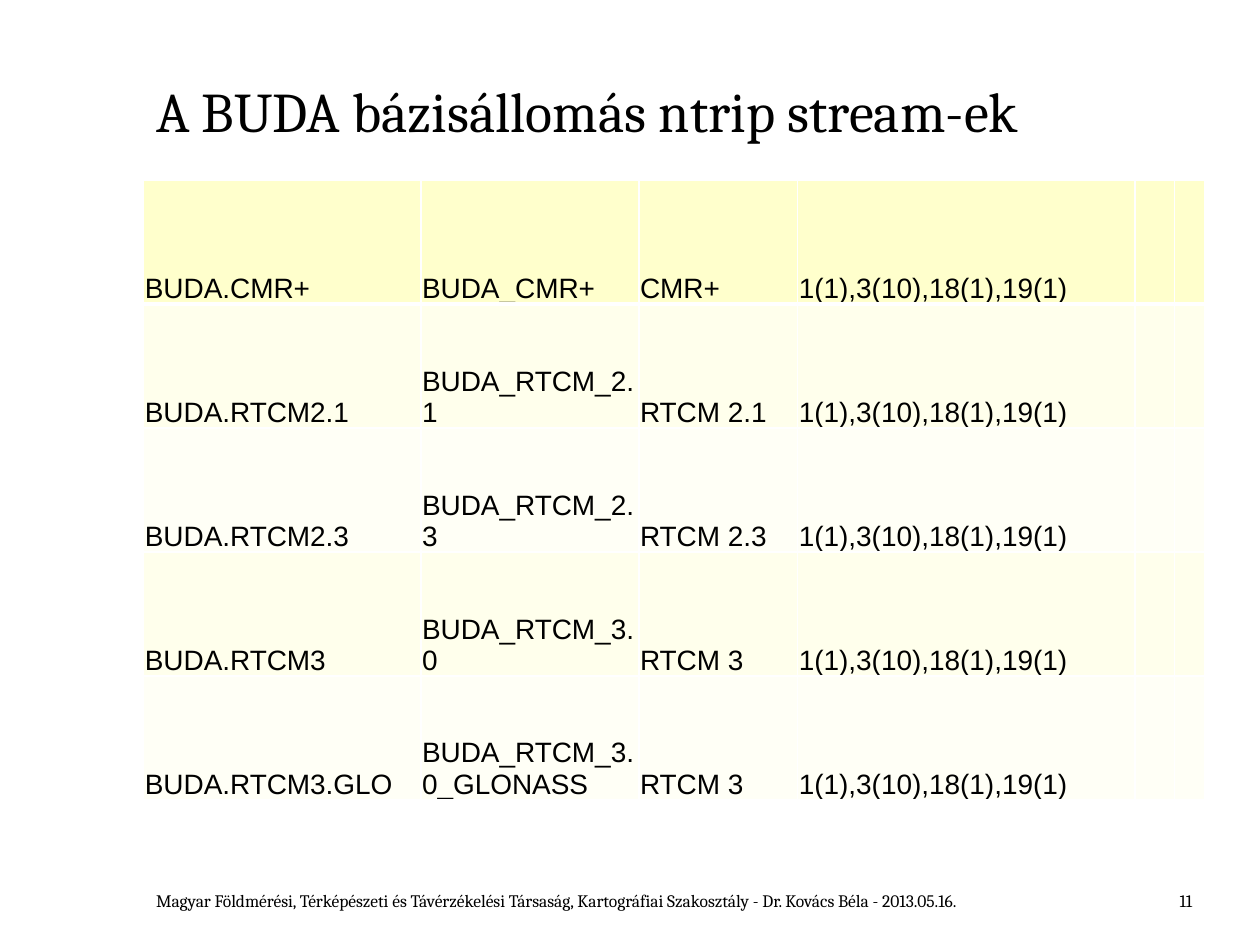
import pptx
import pptx.dml.color
import pptx.enum.text
import pptx.oxml
import pptx.oxml.ns
import pptx.util

Inches, Pt = pptx.util.Inches, pptx.util.Pt
RGBColor = pptx.dml.color.RGBColor
ANCHOR = pptx.enum.text.MSO_ANCHOR
ALIGN = pptx.enum.text.PP_ALIGN

COLORS = {
    "text": "000000",
    "border": "FFFFFF",
    "header": "FFFFCC",
    "odd row": "FFFFEC",
    "even row": "FFFFF6",
}
LEFT, WIDTH = 1.14, 8.43
COLUMN_WIDTHS = [2.2, 1.73, 1.26, 2.68, 0.31, 0.24]
TABLE_TOP, TABLE_HEIGHT = 1.43, 4.92
FOOTER_TOP, FOOTER_HEIGHT = 6.9, 0.38

SATELLITE_MESSAGES = "1(1),3(10),18(1),19(1)"
STREAMS = [
    ("BUDA.CMR+", "BUDA_CMR+", "CMR+"),
    ("BUDA.RTCM2.1", "BUDA_RTCM_2.1", "RTCM 2.1"),
    ("BUDA.RTCM2.3", "BUDA_RTCM_2.3", "RTCM 2.3"),
    ("BUDA.RTCM3", "BUDA_RTCM_3.0", "RTCM 3"),
    ("BUDA.RTCM3.GLO", "BUDA_RTCM_3.0_GLONASS", "RTCM 3"),
]


def add_run(paragraph, text, font_name, size):
    run = paragraph.add_run()
    run.text = text
    run.font.name = font_name
    run.font.size = Pt(size)
    run.font.color.rgb = RGBColor.from_string(COLORS["text"])


def add_borders(cell, bottom_width):
    """Draw all four cell borders; call before the fill is set."""
    properties = cell._tc.get_or_add_tcPr()
    for side, width in (("L", 1), ("R", 1), ("T", 1), ("B", bottom_width)):
        properties.append(pptx.oxml.parse_xml(
            f'<a:ln{side} {pptx.oxml.ns.nsdecls("a")} w="{Pt(width)}">'
            f'<a:solidFill><a:srgbClr val="{COLORS["border"]}"/></a:solidFill>'
            f'</a:ln{side}>'))


presentation = pptx.Presentation()
presentation.slide_width = Inches(10)
presentation.slide_height = Inches(7.5)
slide = presentation.slides.add_slide(presentation.slide_layouts[6])

# Title, footer and slide number
for text, left, top, width, height, size, alignment in (
    ("A BUDA bázisállomás ntrip stream-ek",
     LEFT, 0.25, WIDTH, 0.94, 32, ALIGN.LEFT),
    ("Magyar Földmérési, Térképészeti és Távérzékelési Társaság, "
     "Kartográfiai Szakosztály - Dr. Kovács Béla - 2013.05.16.",
     LEFT, FOOTER_TOP, 7.95, FOOTER_HEIGHT, 10, ALIGN.LEFT),
    ("11", 7.48, FOOTER_TOP, 2.08, FOOTER_HEIGHT, 10, ALIGN.RIGHT),
):
    box = slide.shapes.add_textbox(
        Inches(left), Inches(top), Inches(width), Inches(height))
    frame = box.text_frame
    frame.word_wrap = True
    frame.vertical_anchor = ANCHOR.BOTTOM
    paragraph = frame.paragraphs[0]
    paragraph.alignment = alignment
    add_run(paragraph, text, "Cambria", size)

# Stream table
table = slide.shapes.add_table(
    len(STREAMS), len(COLUMN_WIDTHS), Inches(LEFT), Inches(TABLE_TOP),
    Inches(WIDTH), Inches(TABLE_HEIGHT)).table
for column, width in zip(table.columns, COLUMN_WIDTHS):
    column.width = Inches(width)

for row_index, stream in enumerate(STREAMS):
    if row_index == 0:
        fill, bottom_width = COLORS["header"], 3
    else:
        fill = COLORS["odd row" if row_index % 2 else "even row"]
        bottom_width = 1
    texts = (*stream, SATELLITE_MESSAGES, "", "")
    for column_index, text in enumerate(texts):
        cell = table.cell(row_index, column_index)
        cell.vertical_anchor = ANCHOR.BOTTOM
        cell.margin_left = cell.margin_right = cell.margin_top = Inches(0.01)
        cell.margin_bottom = 0
        add_borders(cell, bottom_width)
        cell.fill.solid()
        cell.fill.fore_color.rgb = RGBColor.from_string(fill)
        if text:
            add_run(cell.text_frame.paragraphs[0], text, "Arial", 16)

presentation.save("out.pptx")
